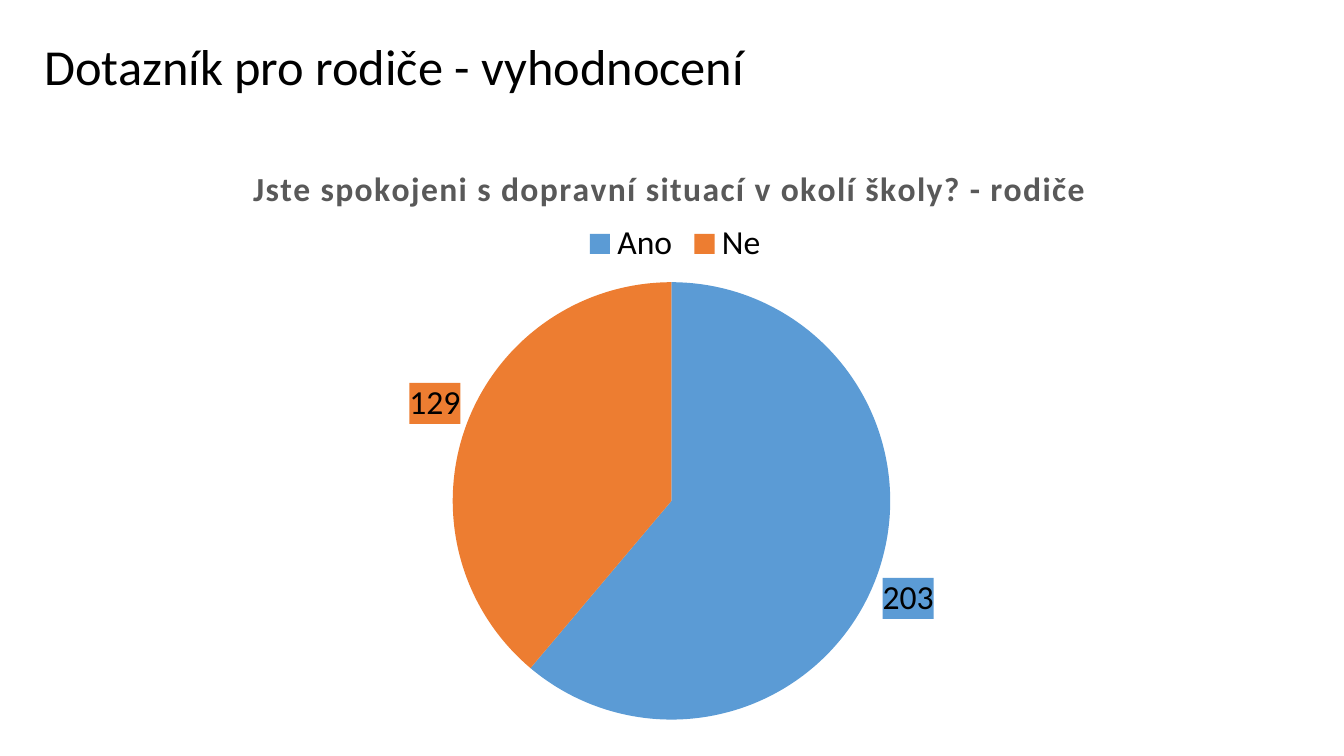
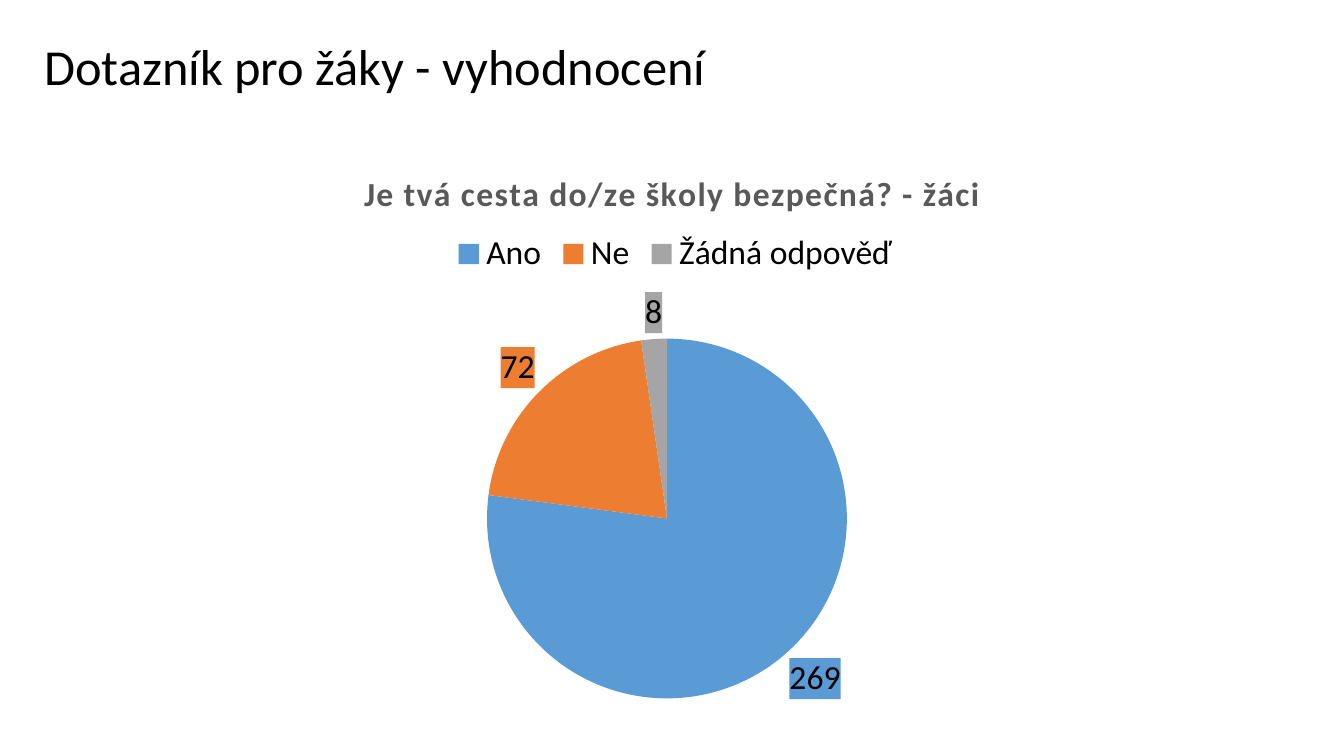
import pptx
import pptx.chart.data
import pptx.dml.color
import pptx.enum.chart
import pptx.enum.text
import pptx.oxml
import pptx.oxml.ns
import pptx.util

Inches = pptx.util.Inches
Pt = pptx.util.Pt

FONT = "Calibri"
BLACK = "000000"
CHART_TITLE_GREY = "595959"
SLICE_COLOURS = ["5B9BD5", "ED7D31", "A5A5A5"]
CHART_BOX = (0.37, 1.38, 12.6, 5.91)

# Places are slide inches: left and top, and for the pie also its diameter.
SLIDES = [
    {
        "heading": "Dotazník pro rodiče - vyhodnocení",
        "question": "Jste spokojeni s dopravní situací v okolí školy? - rodiče",
        "answers": {"Ano": 203, "Ne": 129},
        "question_at": (2.45, 1.59),
        "legend_at": (5.74, 2.15),
        "pie_at": (4.49, 2.8, 4.34),
    },
    {
        "heading": "Dotazník pro žáky - vyhodnocení",
        "question": "Je tvá cesta do/ze školy bezpečná? - žáci",
        "answers": {"Ano": 269, "Ne": 72, "Žádná odpověď": 8},
        "question_at": (3.55, 1.64),
        "legend_at": (4.44, 2.25),
        "pie_at": (4.83, 3.36, 3.57),
    },
]


def colour(hex_value):
    return pptx.dml.color.RGBColor.from_string(hex_value)


def format_font(font, size, hex_value=BLACK, bold=False):
    values = {"name": FONT, "size": Pt(size), "bold": bold}
    for name, value in values.items():
        setattr(font, name, value)
    font.color.rgb = colour(hex_value)


def chart_xml(tag, content):
    namespaces = pptx.oxml.ns.nsdecls("c", "a")
    return pptx.oxml.parse_xml(f"<c:{tag} {namespaces}>{content}</c:{tag}>")


def manual_layout(left, top, diameter=None):
    """Return a chart layout element for a place given in slide inches."""
    chart_left, chart_top, width, height = CHART_BOX
    fractions = {"x": (left - chart_left) / width, "y": (top - chart_top) / height}
    content = '<c:layoutTarget val="inner"/>' if diameter else ""
    content += '<c:xMode val="edge"/><c:yMode val="edge"/>'
    if diameter:
        fractions.update(w=diameter / width, h=diameter / height)
    for name, fraction in fractions.items():
        content += f'<c:{name} val="{fraction:.4f}"/>'
    return chart_xml("layout", f"<c:manualLayout>{content}</c:manualLayout>")


def place(parent, before, layout):
    """Put the layout into a chart part, ahead of the child named before."""
    for automatic_layout in parent.findall(pptx.oxml.ns.qn("c:layout")):
        parent.remove(automatic_layout)
    parent.find(pptx.oxml.ns.qn(before)).addprevious(layout)


def add_heading(slide, text):
    box = slide.shapes.add_textbox(Inches(0.34), 0, Inches(12.99), Inches(1.38))
    frame = box.text_frame
    frame.word_wrap = True
    frame.vertical_anchor = pptx.enum.text.MSO_ANCHOR.MIDDLE
    paragraph = frame.paragraphs[0]
    paragraph.line_spacing = 0.9
    paragraph.text = text
    format_font(paragraph.runs[0].font, 36)


def add_question(chart, text):
    paragraph = chart.chart_title.text_frame.paragraphs[0]
    paragraph.text = text
    run = paragraph.runs[0]
    format_font(run.font, 24, CHART_TITLE_GREY, bold=True)
    run._r.get_or_add_rPr().set("spc", "100")
    chart.chart_title.include_in_layout = False


def add_legend(chart):
    chart.has_legend = True
    chart.legend.position = pptx.enum.chart.XL_LEGEND_POSITION.TOP
    chart.legend.include_in_layout = False
    format_font(chart.legend.font, 24)


def format_slice(point, hex_value):
    """Colour one slice and the box behind its value."""
    point.format.fill.solid()
    point.format.fill.fore_color.rgb = colour(hex_value)
    point.format.line.fill.background()
    label = point.data_label
    format_font(label.font, 24)
    label.position = pptx.enum.chart.XL_LABEL_POSITION.OUTSIDE_END
    fill = f'<a:solidFill><a:srgbClr val="{hex_value}"/></a:solidFill>'
    label_element = label._get_or_add_dLbl()
    for old_format in label_element.findall(pptx.oxml.ns.qn("c:spPr")):
        label_element.remove(old_format)
    text_format = label_element.find(pptx.oxml.ns.qn("c:txPr"))
    text_format.addprevious(chart_xml("spPr", fill))


def add_pie(slide, content):
    answers = content["answers"]
    data = pptx.chart.data.CategoryChartData()
    data.categories = list(answers)
    data.add_series("Series 1", list(answers.values()))
    chart = slide.shapes.add_chart(
        pptx.enum.chart.XL_CHART_TYPE.PIE, *map(Inches, CHART_BOX), data
    ).chart
    format_font(chart.font, 10)
    add_question(chart, content["question"])
    add_legend(chart)
    plot = chart.plots[0]
    plot.vary_by_categories = True
    for index, hex_value in enumerate(SLICE_COLOURS[:len(answers)]):
        format_slice(plot.series[0].points[index], hex_value)

    title, legend = chart.chart_title._element, chart.legend._element
    plot_area = chart._chartSpace.chart.plotArea
    place(title, "c:overlay", manual_layout(*content["question_at"]))
    place(legend, "c:overlay", manual_layout(*content["legend_at"]))
    place(plot_area, "c:pieChart", manual_layout(*content["pie_at"]))


def main():
    presentation = pptx.Presentation()
    presentation.slide_width = Inches(13.33)
    presentation.slide_height = Inches(7.5)
    for content in SLIDES:
        slide = presentation.slides.add_slide(presentation.slide_layouts[6])
        add_heading(slide, content["heading"])
        add_pie(slide, content)
    presentation.save("out.pptx")


if __name__ == "__main__":
    main()
